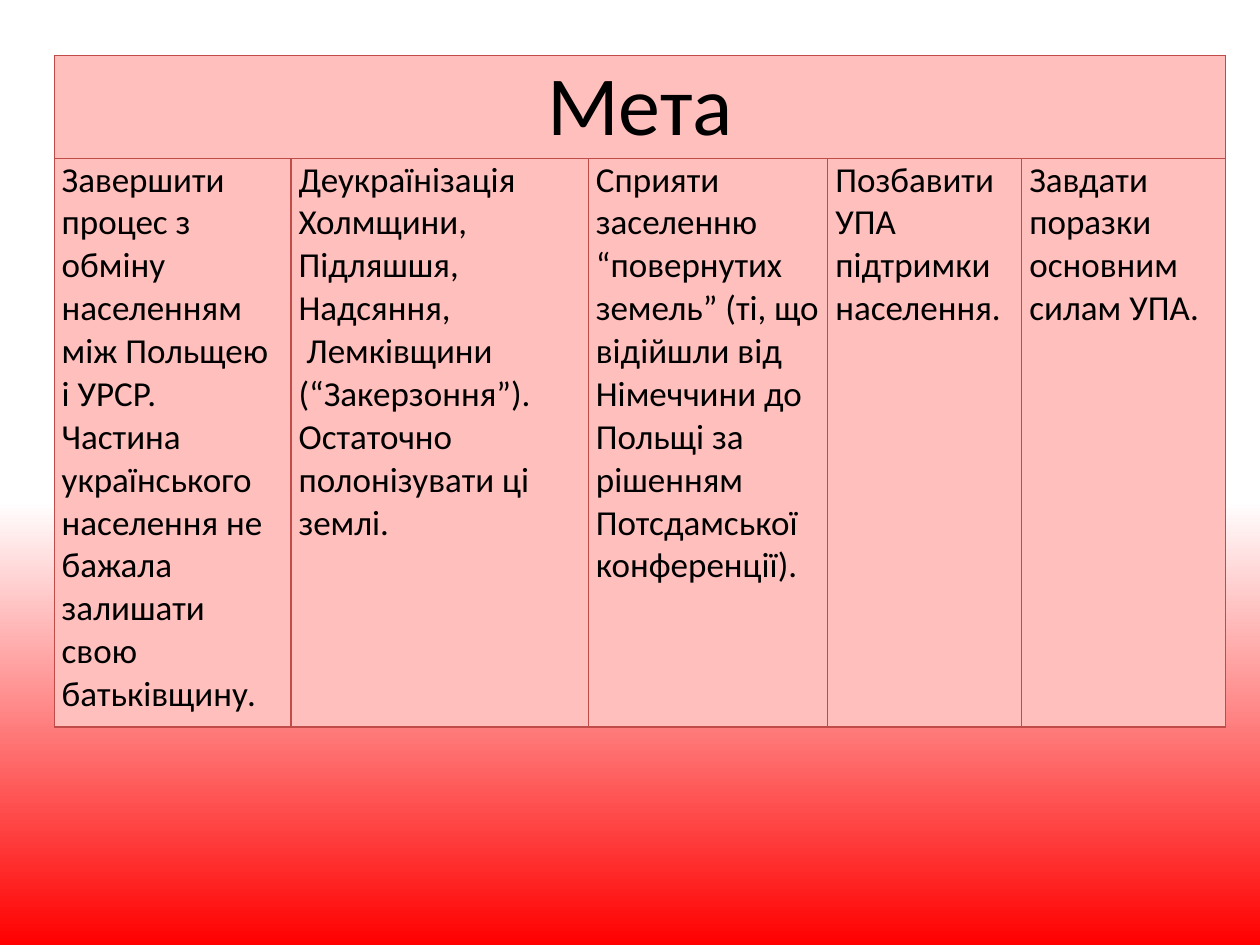
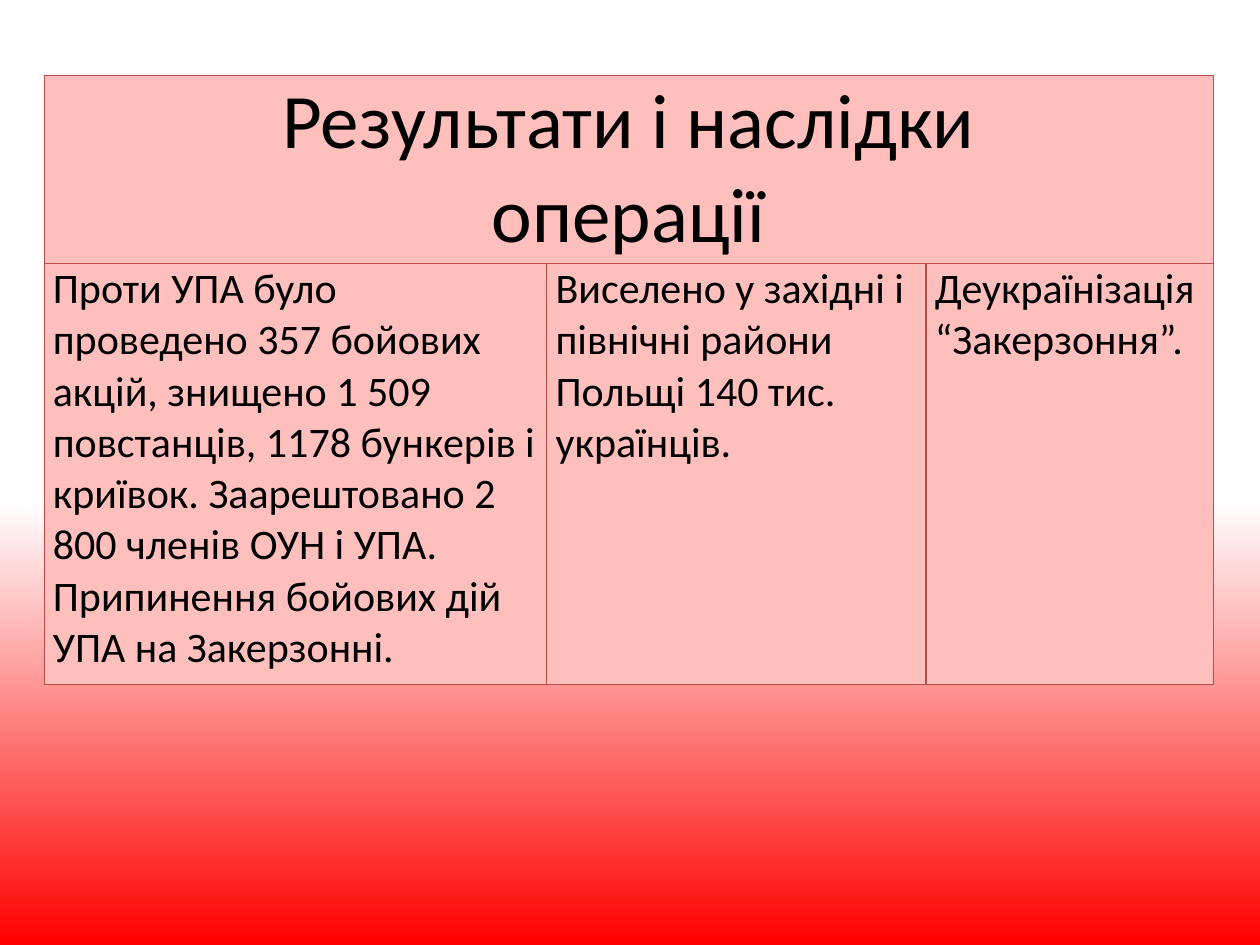
from copy import deepcopy
from lxml.etree import SubElement as Sub
from pptx import Presentation
from pptx.dml.color import RGBColor
from pptx.enum.text import PP_ALIGN as Align
from pptx.oxml.ns import qn
from pptx.util import Inches, Pt

FONT = "Calibri"
INK, PINK, EDGE = "000000", "FFBFBD", "BF4C48"
RED, WHITE = "FF0000", "FFFFFF"


def color(code):
    return RGBColor.from_string(code)


def paint(slide):
    fill = slide.background.fill
    fill.gradient()
    fill.gradient_angle = 90
    for stop, place, code in zip(fill.gradient_stops, (0, 0.47), (RED, WHITE)):
        stop.position = place
        stop.color.rgb = color(code)
    stops = slide.element.find(".//" + qn("a:gsLst"))
    last = deepcopy(stops[-1])
    last.set("pos", "100000")
    stops.append(last)


def write(cell, text, size, align=Align.LEFT, inset=0.06):
    cell.margin_left = cell.margin_right = Inches(inset)
    cell.margin_top = cell.margin_bottom = 0
    frame = cell.text_frame
    frame.text = text
    for para in frame.paragraphs:
        para.alignment = align
        for run in para.runs:
            font = run.font
            font.name, font.size, font.bold = FONT, Pt(size), False
            font.color.rgb = color(INK)


def style(cell):
    props = cell._tc.get_or_add_tcPr()
    for side in ("lnL", "lnR", "lnT", "lnB"):
        line = Sub(props, qn("a:" + side), w=str(Pt(0.75)))
        Sub(Sub(line, qn("a:solidFill")), qn("a:srgbClr"), val=EDGE)
    cell.fill.solid()
    cell.fill.fore_color.rgb = color(PINK)


def add_grid(slide, left, top, cols, rows, title, texts, sizes, inset):
    box = map(Inches, (left, top, sum(cols), sum(rows)))
    table = slide.shapes.add_table(len(rows), len(cols), *box).table
    table.first_row = table.horz_banding = False
    for col, width in zip(table.columns, cols):
        col.width = Inches(width)
    for row, height in zip(table.rows, rows):
        row.height = Inches(height)
    for cell in table.iter_cells():
        style(cell)
    head = table.cell(0, 0)
    head.merge(table.cell(0, len(cols) - 1))
    write(head, title, sizes[0], align=Align.CENTER, inset=inset)
    for i, text in enumerate(texts):
        write(table.cell(1, i), text, sizes[1], inset=inset)


GOALS = dict(
    left=0.43, top=0.44, cols=(1.88, 2.36, 1.9, 1.54, 1.62), rows=(0.82, 4.51),
    title="Мета", sizes=(48, 20), inset=0.06,
    texts=(
        "Завершити процес з обміну населенням між Польщею і УРСР. "
        "Частина українського населення не бажала залишати свою батьківщину.",
        "Деукраїнізація Холмщини, Підляшшя, Надсяння,\n"
        " Лемківщини (“Закерзоння”). Остаточно полонізувати ці землі.",
        "Сприяти заселенню “повернутих земель” (ті, що відійшли від "
        "Німеччини до Польщі за рішенням Потсдамської конференції).",
        "Позбавити УПА підтримки населення.",
        "Завдати поразки основним силам УПА.",
    ),
)
RESULTS = dict(
    left=0.35, top=0.6, cols=(3.99, 3.01, 2.28), rows=(1.49, 3.34),
    title="Результати і наслідки\nоперації", sizes=(44, 24), inset=0.07,
    texts=(
        "Проти УПА було проведено 357 бойових акцій, знищено 1 509 "
        "повстанців, 1178 бункерів і криївок. Заарештовано 2 800 членів "
        "ОУН і УПА. Припинення бойових дій УПА на Закерзонні.",
        "Виселено у західні і північні райони Польщі 140 тис. українців.",
        "Деукраїнізація “Закерзоння”.",
    ),
)


def main():
    deck = Presentation()
    deck.slide_width, deck.slide_height = Inches(10), Inches(7.5)
    for parts in (GOALS, RESULTS):
        slide = deck.slides.add_slide(deck.slide_layouts[6])
        paint(slide)
        add_grid(slide, **parts)
    deck.save("out.pptx")


if __name__ == "__main__":
    main()
